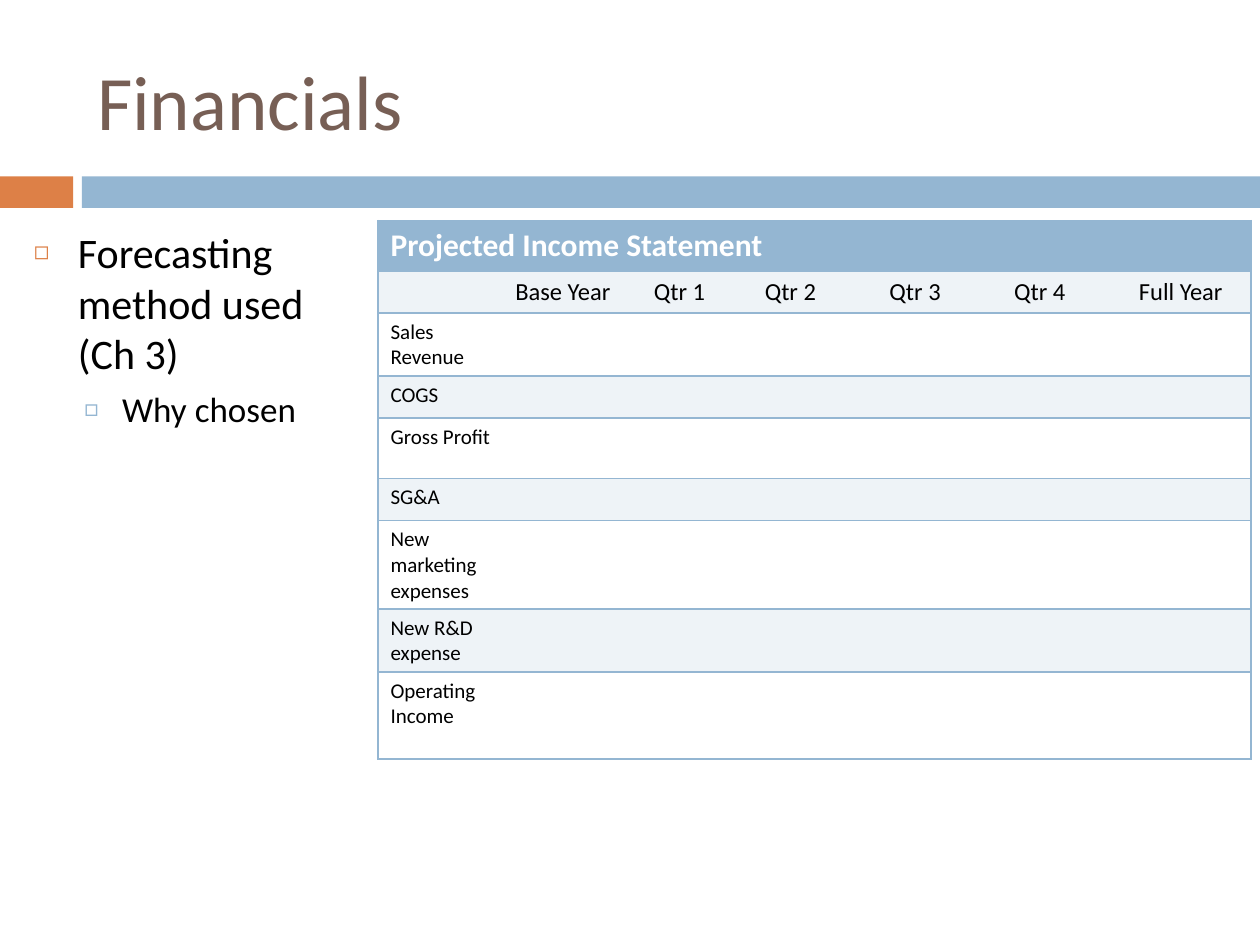
from lxml.etree import SubElement
from pptx import Presentation
from pptx.dml.color import RGBColor
from pptx.enum.shapes import MSO_SHAPE
from pptx.enum.text import MSO_ANCHOR, MSO_AUTO_SIZE, PP_ALIGN
from pptx.oxml.ns import qn
from pptx.util import Inches, Pt

COLORS = {
    "title": "775F55",
    "accent": "DD8047",
    "blue": "94B6D2",
    "band": "EEF3F7",
    "white": "FFFFFF",
    "black": "000000",
}
FONT = "Calibri"
COLUMNS, ROWS = 100, 75
NO_GRID_STYLE = "{2D5ABB26-0587-4C30-8999-92F81FD0307C}"

QUARTERS = ["Qtr 1", "Qtr 2", "Qtr 3", "Qtr 4"]
PERIODS = ["", "Base Year", *QUARTERS, "Full Year"]
LINE_ITEMS = ["Sales Revenue", "COGS", "Gross Profit", "SG&A",
              "New marketing expenses", "New R&D expense", "Operating\nIncome"]
COLUMN_WIDTHS = [9.9, 11, 8.8] + [9.9] * 4
ROW_HEIGHTS = [3.2, 3.1, 4.8, 3.1, 4.8, 3.1, 6.9, 4.8, 6.9]


def rgb(color):
    return RGBColor.from_string(COLORS[color])


class SlideBuilder:
    """Places styled elements on a grid of COLUMNS by ROWS."""

    def __init__(self, prs):
        self.cell_width = prs.slide_width / COLUMNS
        self.cell_height = prs.slide_height / ROWS
        self.slide = prs.slides.add_slide(prs.slide_layouts[5])

    def box(self, left, top, width, height):
        return (round(left * self.cell_width), round(top * self.cell_height),
                round(width * self.cell_width), round(height * self.cell_height))

    def add_run(self, paragraph, text, size, color="black", bold=False):
        run = paragraph.add_run()
        run.text = text
        run.font.name = FONT
        run.font.size = Pt(size)
        run.font.bold = bold
        run.font.color.rgb = rgb(color)

    def title(self, text, *place):
        title = self.slide.shapes.title
        title.left, title.top, title.width, title.height = self.box(*place)
        frame = title.text_frame
        frame.vertical_anchor = MSO_ANCHOR.MIDDLE
        frame.auto_size = MSO_AUTO_SIZE.NONE
        frame.paragraphs[0].alignment = PP_ALIGN.LEFT
        self.add_run(frame.paragraphs[0], text, 44, "title")

    def bar(self, color, *place):
        bar = self.slide.shapes.add_shape(MSO_SHAPE.RECTANGLE, *self.box(*place))
        bar.shadow.inherit = False
        bar.fill.solid()
        bar.fill.fore_color.rgb = rgb(color)
        bar.line.fill.background()

    def bullets(self, items, *place):
        """Items hold text, size, space before, indent, hanging, mark, mark color, mark percent."""
        frame = self.slide.shapes.add_textbox(*self.box(*place)).text_frame
        frame.word_wrap = True
        for level, (text, size, before, indent, hanging, mark, color, percent) in enumerate(items):
            paragraph = frame.add_paragraph() if level else frame.paragraphs[0]
            paragraph.level = level
            paragraph.space_before = Pt(before)
            self.add_run(paragraph, text, size)
            props = paragraph._p.get_or_add_pPr()
            props.set("marL", str(Inches(indent)))
            props.set("indent", str(-Inches(hanging)))
            SubElement(SubElement(props, qn("a:buClr")), qn("a:srgbClr"), val=COLORS[color])
            SubElement(props, qn("a:buSzPct"), val=str(percent * 1000))
            SubElement(props, qn("a:buFont"), typeface=FONT)
            SubElement(props, qn("a:buChar"), char=mark)

    def style_cell(self, cell, fill, sides):
        props = cell._tc.get_or_add_tcPr()
        for side in sides:
            border = SubElement(props, qn(f"a:ln{side}"), w=str(Pt(1)))
            SubElement(SubElement(border, qn("a:solidFill")), qn("a:srgbClr"), val=COLORS["blue"])
        cell.fill.solid()
        cell.fill.fore_color.rgb = rgb(fill)

    def fill_cell(self, cell, text, size, color="black", bold=False):
        frame = cell.text_frame
        for index, line in enumerate(text.split("\n")):
            paragraph = frame.add_paragraph() if index else frame.paragraphs[0]
            if line:
                self.add_run(paragraph, line, size, color, bold)
            else:
                SubElement(paragraph._p, qn("a:endParaRPr"), sz=str(size * 100))

    def income_table(self, heading, periods, line_items, *place):
        last = len(periods) - 1
        body = [periods] + [[item] + [""] * last for item in line_items]
        table = self.slide.shapes.add_table(len(body) + 1, len(periods), *self.box(*place)).table
        table._tbl.tblPr.find(qn("a:tableStyleId")).text = NO_GRID_STYLE
        for column, width in zip(table.columns, COLUMN_WIDTHS):
            column.width = round(width * self.cell_width)
        for row, height in zip(table.rows, ROW_HEIGHTS):
            row.height = round(height * self.cell_height)

        table.cell(0, 0).merge(table.cell(0, last))
        self.fill_cell(table.cell(0, 0), heading, 18, "white", True)
        for r, row in enumerate(table.rows):
            fill = "blue" if r == 0 else "band" if r % 2 else "white"
            for c, cell in enumerate(row.cells):
                sides = ["L"] * (c == 0) + ["R"] * (c == last or r == 0 == c) + ["T", "B"]
                self.style_cell(cell, fill, sides)
                if r:
                    self.fill_cell(cell, body[r - 1][c], 12 if r > 1 and c == 0 else 14)


def main():
    prs = Presentation()
    prs.slide_width, prs.slide_height = Inches(10), Inches(7.5)
    financials = SlideBuilder(prs)
    financials.bar("accent", 0, 14, 5.8, 2.5)
    financials.bar("blue", 6.5, 14, 93.5, 2.5)
    financials.title("Financials", 6.7, 2.5, 89.2, 10.8)
    financials.bullets([
        ("Forecasting method used (Ch 3)", 24, 7, 0.35, 0.35, "◻", "accent", 60),
        ("Why chosen", 20, 5.5, 0.7, 0.3, "□", "blue", 70),
    ], 1.7, 17.5, 25.8, 49.5)
    financials.income_table("Projected Income Statement", PERIODS, LINE_ITEMS,
                            30, 17.5, 69, 42.7)
    prs.save("out.pptx")


if __name__ == "__main__":
    main()
